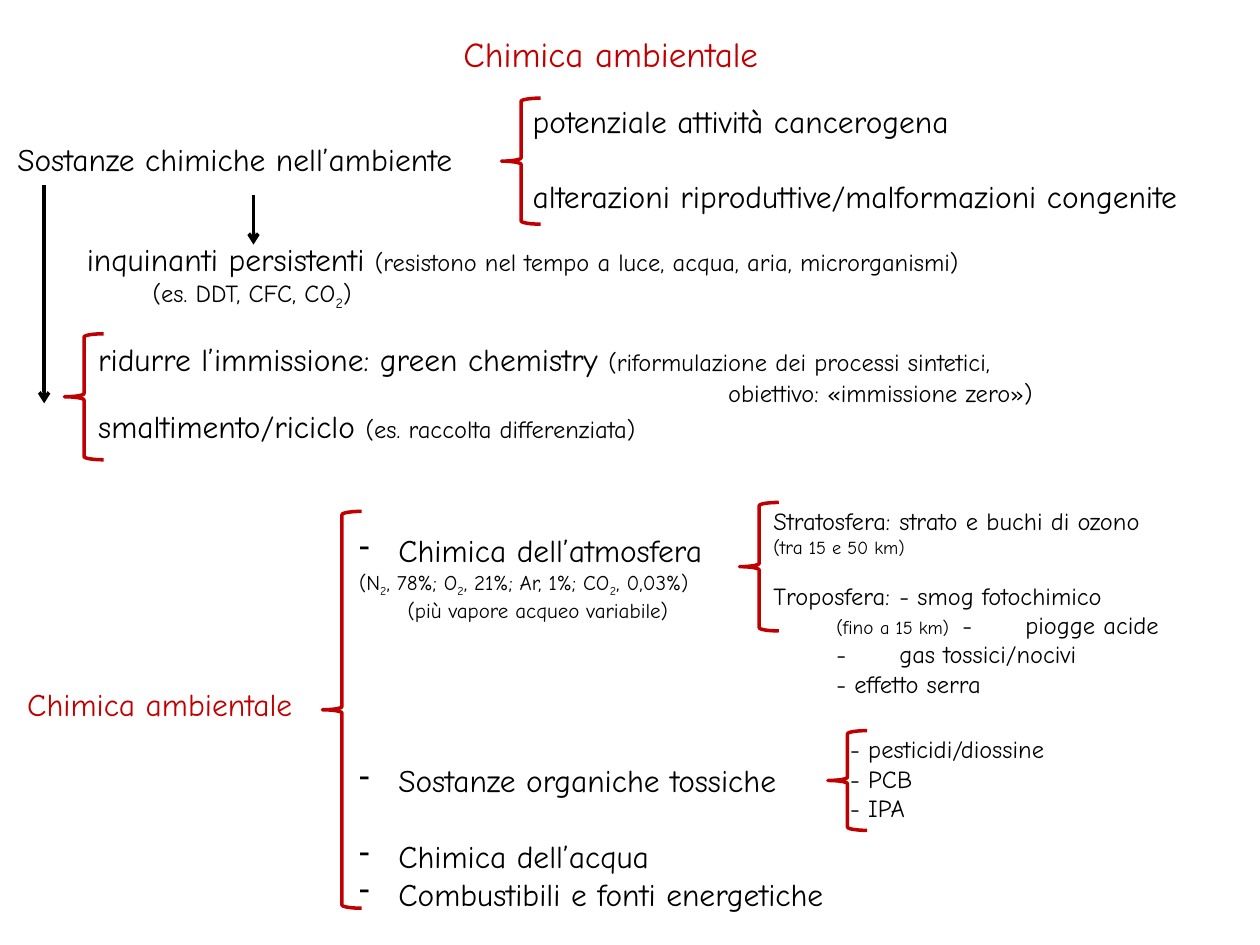
from lxml.etree import SubElement
from pptx import Presentation
from pptx.dml.color import RGBColor as Rgb
from pptx.enum.shapes import MSO_CONNECTOR as Connector, MSO_SHAPE as Shape
from pptx.oxml.ns import qn
from pptx.util import Cm, Pt


class Theme:
    font = "Comic Neue"
    black = Rgb(0x00, 0x00, 0x00)
    red = Rgb(0xC0, 0x00, 0x00)
    title, main, detail, small, note, tiny = 20, 18, 14, 12, 11, 10.5
    line = 2
    brace_width = 0.79
    subscript = "-25000"


def line_of(*runs, **layout):
    """One paragraph: runs are (text, size) or (text, size, "sub")."""
    return runs, layout


def formula(size, *parts):
    """Alternate plain text and subscripts."""
    return [(part, size, "sub") if i % 2 else (part, size)
            for i, part in enumerate(parts)]


# Content: (left, top, width, height) in cm, colour, paragraphs
T = Theme
BULLET = {"indent": 0.79, "bullet": "-"}
LAYER_TABS = (3.0,)
TEXTS = [
    ((9.09, 0.53, 7.06, 1.12), T.red, [line_of(("Chimica ambientale", T.title))]),
    ((0.1, 2.69, 10.31, 1.02), T.black,
     [line_of(("Sostanze chimiche nell’ambiente", T.main))]),
    ((10.49, 1.93, 14.9, 2.57), T.black, [
        line_of(("potenziale attività cancerogena", T.main)),
        line_of(("alterazioni riproduttive/malformazioni congenite", T.main), before=21.5),
    ]),
    ((1.5, 4.72, 19.63, 1.63), T.black, [
        line_of(("inquinanti persistenti ", T.main),
                ("(resistono nel tempo a luce, acqua, aria, microrganismi)", T.detail)),
        line_of(*formula(T.detail, "(es. DDT, CFC, CO", "2", ")"), indent=1.33),
    ]),
    ((1.73, 6.73, 21.11, 2.39), T.black, [
        line_of(("ridurre l’immissione: green chemistry ", T.main),
                ("(riformulazione dei processi sintetici,", T.detail)),
        line_of(("obiettivo: «immissione zero»)", T.detail), indent=12.7),
        line_of(("smaltimento/riciclo ", T.main),
                ("(es. raccolta differenziata)", T.detail)),
    ]),
    ((0.3, 13.69, 6.58, 1.02), T.red, [line_of(("Chimica ambientale", T.main))]),
    ((6.99, 10.59, 10.92, 7.95), T.black, [
        line_of(("Chimica dell’atmosfera", T.main), **BULLET),
        line_of(*formula(T.small, "(N", "2", ", 78%; O", "2", ", 21%; Ar, 1%; CO",
                         "2", ", 0,03%)")),
        line_of(("(più vapore acqueo variabile)", T.small), indent=0.98),
        line_of(("Sostanze organiche tossiche", T.main), before=79, **BULLET),
        line_of(("Chimica dell’acqua", T.main), before=21.5, **BULLET),
        line_of(("Combustibili e fonti energetiche", T.main), **BULLET),
    ]),
    ((15.34, 10.08, 9.4, 4.17), T.black, [
        line_of(("Stratosfera:\tstrato e buchi di ozono", T.detail), tabs=LAYER_TABS),
        line_of(("(tra", T.note), (" 15 e 50 km)", T.tiny)),
        line_of(("Troposfera:\t- smog fotochimico", T.detail), before=12.5,
                tabs=LAYER_TABS),
        line_of(("\t(fino ", T.note), ("a 15 km)", T.tiny),
                ("\t-\tpiogge acide", T.detail), tabs=(0.25, 3.27, 3.8)),
        line_of(("\t-\tgas tossici/nocivi", T.detail), tabs=(3.8, 4.32)),
        line_of(("\t- effetto serra", T.detail), tabs=(3.8,)),
    ]),
    ((16.89, 14.68, 4.98, 2.06), T.black,
     [line_of((text, T.detail)) for text in ("- pesticidi/diossine", "- PCB", "- IPA")]),
]
# Braces: left, top, height; arrows: x, start y, end y
BRACES = [(10.11, 1.98, 2.54), (1.3, 6.73, 2.54), (6.5, 10.31, 8.0),
          (14.91, 10.13, 2.59), (16.69, 14.73, 2.01)]
ARROWS = [(5.11, 3.94, 4.93), (0.89, 3.73, 8.13)]


def format_para(para, indent=0, bullet=None, before=0, tabs=()):
    para.space_before = Pt(before)
    props = para._p.get_or_add_pPr()
    props.set("marL", str(Cm(indent)))
    props.set("indent", str(-Cm(indent) if bullet else 0))
    if bullet:
        SubElement(props, qn("a:buChar"), char=bullet)
    if tabs:
        stops = SubElement(props, qn("a:tabLst"))
        for stop in tabs:
            SubElement(stops, qn("a:tab"), pos=str(Cm(stop)), algn="l")


def add_text(page, place, color, lines):
    box = page.shapes.add_textbox(*map(Cm, place))
    frame = box.text_frame
    frame.word_wrap = True
    for number, (runs, layout) in enumerate(lines):
        para = frame.add_paragraph() if number else frame.paragraphs[0]
        format_para(para, **layout)
        for text, size, *sub in runs:
            span = para.add_run()
            span.text = text
            span.font.name = Theme.font
            span.font.size = Pt(size)
            span.font.color.rgb = color
            if sub:
                span._r.get_or_add_rPr().set("baseline", Theme.subscript)


def add_brace(page, left, top, height):
    brace = page.shapes.add_shape(Shape.LEFT_BRACE, Cm(left), Cm(top),
                                  Cm(Theme.brace_width), Cm(height))
    brace.shadow.inherit = False
    brace.fill.background()
    brace.line.color.rgb = Theme.red
    brace.line.width = Pt(Theme.line)


def add_arrow(page, x, start, end):
    arrow = page.shapes.add_connector(Connector.STRAIGHT, Cm(x), Cm(start), Cm(x), Cm(end))
    arrow.line.color.rgb = Theme.black
    arrow.line.width = Pt(Theme.line)
    SubElement(arrow.line._get_or_add_ln(), qn("a:tailEnd"), type="arrow")
    SubElement(arrow._element.spPr, qn("a:effectLst"))


def main():
    deck = Presentation()
    deck.slide_width, deck.slide_height = Cm(25.4), Cm(19.05)
    page = deck.slides.add_slide(deck.slide_layouts[6])
    for text in TEXTS:
        add_text(page, *text)
    for brace in BRACES:
        add_brace(page, *brace)
    for arrow in ARROWS:
        add_arrow(page, *arrow)
    deck.save("out.pptx")


if __name__ == "__main__":
    main()
